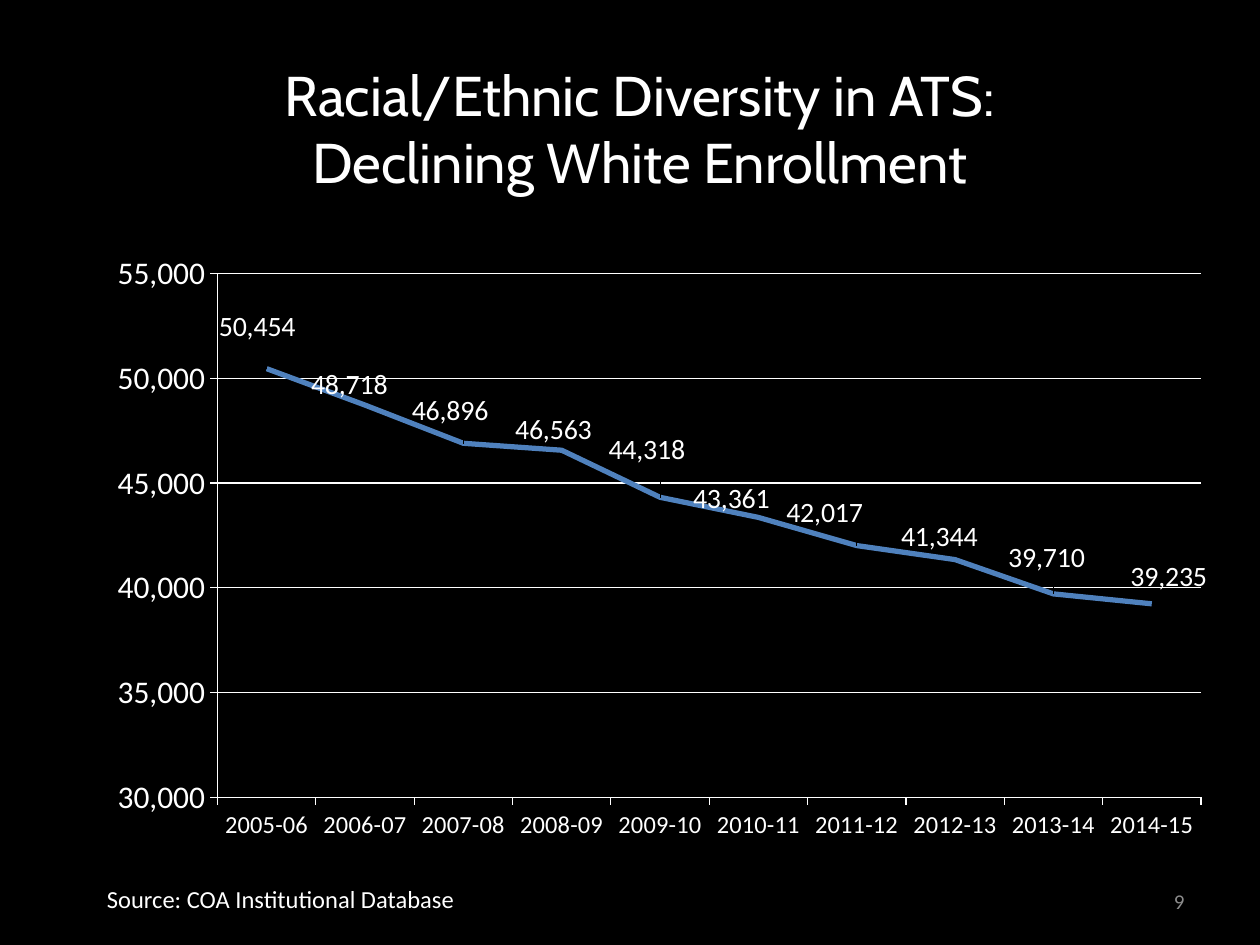
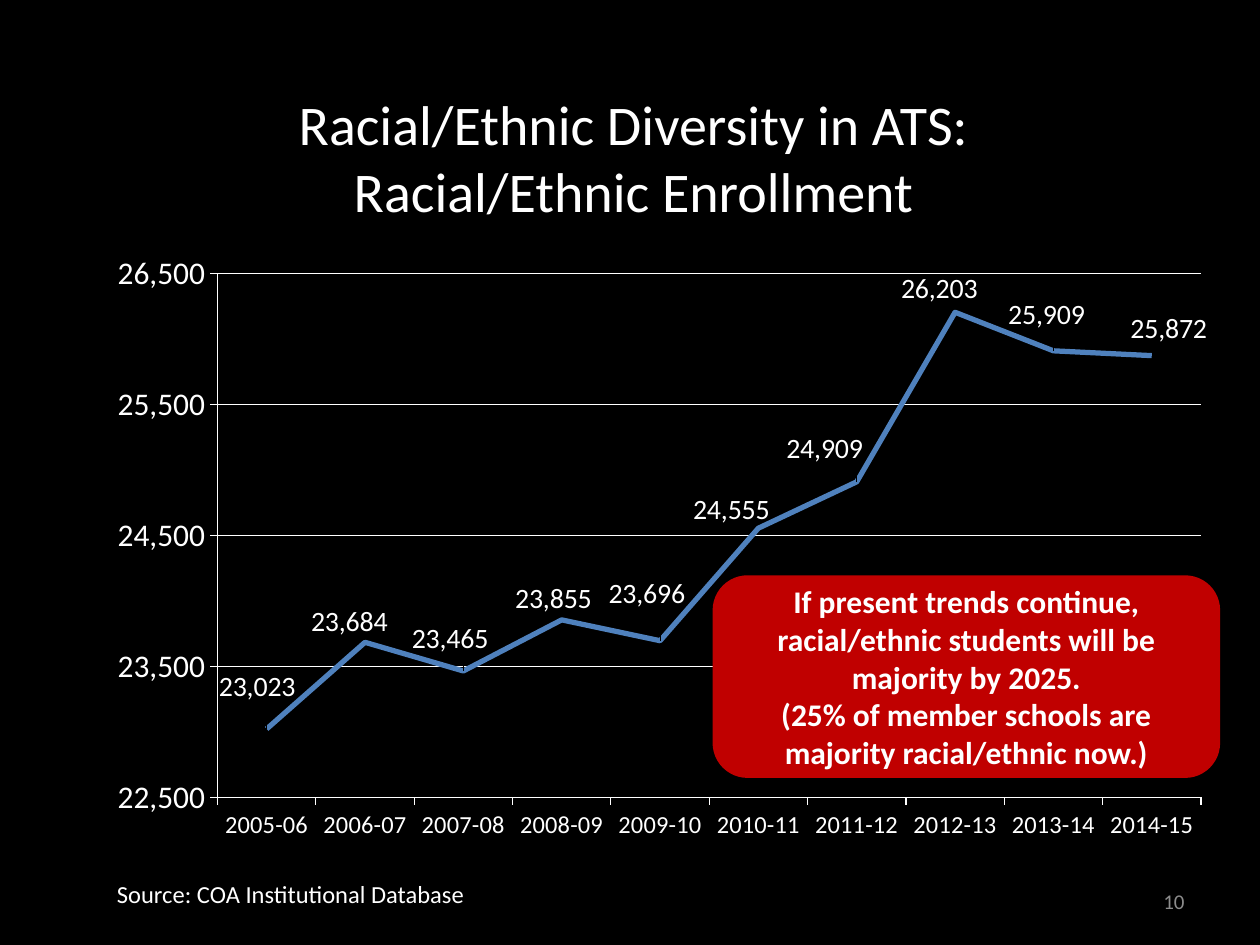
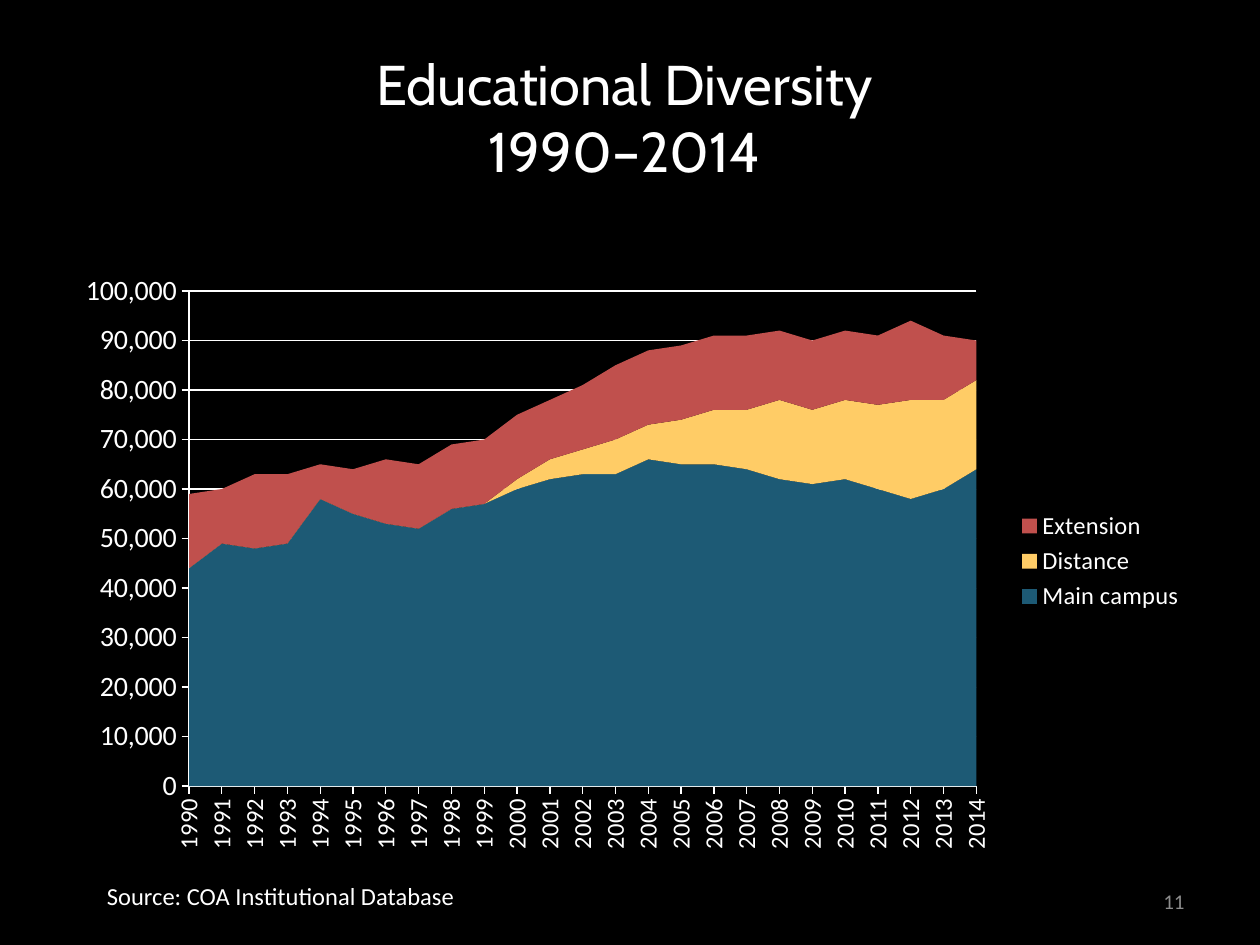
from lxml.etree import SubElement
from pptx import Presentation
from pptx.chart.data import CategoryChartData
from pptx.dml.color import RGBColor
from pptx.enum.chart import (XL_CHART_TYPE, XL_LABEL_POSITION, XL_LEGEND_POSITION,
                             XL_MARKER_STYLE, XL_TICK_MARK)
from pptx.enum.shapes import MSO_SHAPE
from pptx.enum.text import MSO_ANCHOR, PP_ALIGN
from pptx.oxml.ns import qn
from pptx.util import Inches, Pt

COLORS = {
    "background": "000000", "text": "FFFFFF", "number": "8C8C8C",
    "line": "4F81BD", "callout": "C00000",
    "main": "1D5A75", "distance": "FFCC66", "extension": "C0504D",
}
rgb = {name: RGBColor.from_string(value) for name, value in COLORS.items()}
THOUSANDS = "#,##0"


def write_text(frame, paragraphs, size, align=PP_ALIGN.LEFT, font="Calibri",
               color="text", bold=False, anchor=MSO_ANCHOR.TOP):
    """Fill a text frame; a newline within a paragraph becomes a line break."""
    frame.word_wrap = True
    frame.vertical_anchor = anchor
    for index, text in enumerate(paragraphs):
        paragraph = frame.add_paragraph() if index else frame.paragraphs[0]
        paragraph.alignment = align
        for line_index, line in enumerate(text.split("\n")):
            if line_index:
                paragraph.add_line_break()
            run = paragraph.add_run()
            run.text = line
            run.font.size = Pt(size)
            run.font.name = font
            run.font.bold = bold
            run.font.color.rgb = rgb[color]


def set_layout(layout, **parts):
    """Fill a c:layout element with a manual layout."""
    manual = SubElement(layout, qn("c:manualLayout"))
    for tag, value in parts.items():
        SubElement(manual, qn(f"c:{tag}")).set("val", str(value))


prs = Presentation()
prs.slide_width, prs.slide_height = Inches(10), Inches(7.5)

school_years = [f"{year}-{year - 1999:02d}" for year in range(2005, 2015)]
calendar_years = [str(year) for year in range(1990, 2015)]

# Boxes are left, top, width, height in inches; plot areas are measured within the chart.
slides = [
    {
        "title": "Racial/Ethnic Diversity in ATS:\nDeclining White Enrollment",
        "title_box": (0.58, 0.5, 9, 1.02), "title_font": "Cabin",
        "source_at": (0.75, 6.97),
        "kind": XL_CHART_TYPE.LINE, "chart_box": (0.58, 1.92, 9, 4.83),
        "plot": (1.15, 0.25, 7.83, 4.16), "value_size": 18,
        "scale": (30000, 55000, 5000), "categories": school_years,
        "series": [("Series 1", "line", [50454, 48718, 46896, 46563, 44318,
                                         43361, 42017, 41344, 39710, 39235])],
    },
    {
        "title": "Racial/Ethnic Diversity in ATS:\nRacial/Ethnic Enrollment",
        "title_box": (0.53, 0.53, 9, 1.42), "title_font": "Calibri",
        "source_at": (0.83, 6.93),
        "kind": XL_CHART_TYPE.LINE, "chart_box": (0.58, 1.92, 9, 4.83),
        "plot": (1.15, 0.25, 7.83, 4.16), "value_size": 18,
        "scale": (22500, 26500, 1000), "categories": school_years,
        "series": [("Series 1", "line", [23023, 23684, 23465, 23855, 23696,
                                         24555, 24909, 26203, 25909, 25872])],
        "callout": ["If present trends continue,",
                    "racial/ethnic students will be majority by 2025.",
                    "(25% of member schools are majority racial/ethnic now.)"],
    },
    {
        "title": "Educational Diversity\n1990–2014",
        "title_box": (0.46, 0.3, 9, 1.25), "title_font": "Cabin",
        "source_at": (0.75, 6.94),
        "kind": XL_CHART_TYPE.AREA_STACKED, "chart_box": (0.5, 2.08, 9, 4.75),
        "plot": (1, 0.23, 6.25, 3.93), "value_size": 16,
        "scale": (0, 100000, 10000), "categories": calendar_years,
        "series": [
            ("Main campus", "main", [
                44000, 49000, 48000, 49000, 58000, 55000, 53000, 52000, 56000,
                57000, 60000, 62000, 63000, 63000, 66000, 65000, 65000, 64000,
                62000, 61000, 62000, 60000, 58000, 60000, 64000]),
            ("Distance", "distance", [0] * 10 + [
                2000, 4000, 5000, 7000, 7000, 9000, 11000, 12000, 16000, 15000,
                16000, 17000, 20000, 18000, 18000]),
            ("Extension", "extension", [
                15000, 11000, 15000, 14000, 7000, 9000, 13000, 13000, 13000,
                13000, 13000, 12000, 13000, 15000, 15000, 15000, 15000, 15000,
                14000, 14000, 14000, 14000, 16000, 13000, 8000]),
        ],
    },
]

# Shift of each value label, in inches, from its place right of the point
label_shifts = [(-0.42, -0.33), (-0.47, -0.16), (-0.45, -0.25), (-0.41, -0.16),
                (-0.45, -0.37), (-0.56, -0.14), (-0.6, -0.26), (-0.47, -0.18),
                (-0.4, -0.28), (-0.21, -0.21)]

for number, content in enumerate(slides, start=9):
    slide = prs.slides.add_slide(prs.slide_layouts[6])
    slide.background.fill.solid()
    slide.background.fill.fore_color.rgb = rgb["background"]

    title = slide.shapes.add_textbox(*map(Inches, content["title_box"]))
    write_text(title.text_frame, [content["title"]], 32, PP_ALIGN.CENTER,
               content["title_font"], anchor=MSO_ANCHOR.MIDDLE)

    data = CategoryChartData(number_format=THOUSANDS)
    data.categories = content["categories"]
    for name, _, values in content["series"]:
        data.add_series(name, values)
    chart = slide.shapes.add_chart(
        content["kind"], *map(Inches, content["chart_box"]), data).chart
    chart.has_title = False
    chart.has_legend = len(content["series"]) > 1
    chart.font.size = Pt(18)
    chart.font.name = "Calibri"
    chart.font.color.rgb = rgb["text"]

    chart_width, chart_height = content["chart_box"][2:]
    left, top, width, height = content["plot"]
    plot_area = chart.plots[0]._element.getparent()
    layout = plot_area.find(qn("c:layout"))
    if layout is None:
        layout = SubElement(plot_area, qn("c:layout"))
        plot_area.insert(0, layout)
    set_layout(layout, layoutTarget="inner", xMode="edge", yMode="edge",
               x=round(left / chart_width, 4), y=round(top / chart_height, 4),
               w=round(width / chart_width, 4), h=round(height / chart_height, 4))

    years, enrollment = chart.category_axis, chart.value_axis
    years.tick_labels.font.size = Pt(14)
    years.has_major_gridlines = False
    enrollment.tick_labels.font.size = Pt(content["value_size"])
    enrollment.tick_labels.number_format = THOUSANDS
    enrollment.tick_labels.number_format_is_linked = False
    enrollment.minimum_scale, enrollment.maximum_scale, enrollment.major_unit = content["scale"]
    enrollment.has_major_gridlines = True
    for axis in (years, enrollment):
        axis.major_tick_mark = XL_TICK_MARK.OUTSIDE
        axis.minor_tick_mark = XL_TICK_MARK.NONE
    for stroke in (years.format.line, enrollment.format.line,
                   enrollment.major_gridlines.format.line):
        stroke.color.rgb = rgb["text"]
        stroke.width = Pt(0.75)

    for series, (_, color, _) in zip(chart.plots[0].series, content["series"]):
        if content["kind"] == XL_CHART_TYPE.AREA_STACKED:
            series.format.fill.solid()
            series.format.fill.fore_color.rgb = rgb[color]
            continue
        series.smooth = False
        series.marker.style = XL_MARKER_STYLE.NONE
        series.format.line.color.rgb = rgb[color]
        series.format.line.width = Pt(3)
        for index in range(len(label_shifts)):
            label = series.points[index].data_label
            label.position = XL_LABEL_POSITION.RIGHT
            label.font.size = Pt(16)
            label.font.color.rgb = rgb["text"]
        for label, (dx, dy) in zip(series._element.iter(qn("c:dLbl")), label_shifts):
            layout = SubElement(label, qn("c:layout"))
            label.insert(1, layout)
            set_layout(layout, x=round(dx / chart_width, 4), y=round(dy / chart_height, 4))

    if chart.has_legend:
        chart.plots[0].vary_by_categories = False
        chart.legend.position = XL_LEGEND_POSITION.RIGHT
        chart.legend.include_in_layout = False
        chart.legend.font.size = Pt(14)
        years._element.find(qn("c:txPr")).find(qn("a:bodyPr")).set("rot", "-5400000")

    if "callout" in content:
        callout = slide.shapes.add_shape(
            MSO_SHAPE.ROUNDED_RECTANGLE, Inches(5.67), Inches(4.58), Inches(4), Inches(1.58))
        callout.shadow.inherit = False
        callout.fill.solid()
        callout.fill.fore_color.rgb = rgb["callout"]
        callout.line.color.rgb = rgb["callout"]
        callout.line.width = Pt(2)
        write_text(callout.text_frame, content["callout"], 18, PP_ALIGN.CENTER,
                   bold=True, anchor=MSO_ANCHOR.MIDDLE)

    source = slide.shapes.add_textbox(*map(Inches, (*content["source_at"], 4.08, 0.34)))
    write_text(source.text_frame, ["Source: COA Institutional Database"], 14)

    page = slide.shapes.add_textbox(Inches(7.17), Inches(6.95), Inches(2.33), Inches(0.4))
    write_text(page.text_frame, [str(number)], 12, PP_ALIGN.RIGHT,
               color="number", anchor=MSO_ANCHOR.MIDDLE)

prs.save("out.pptx")
